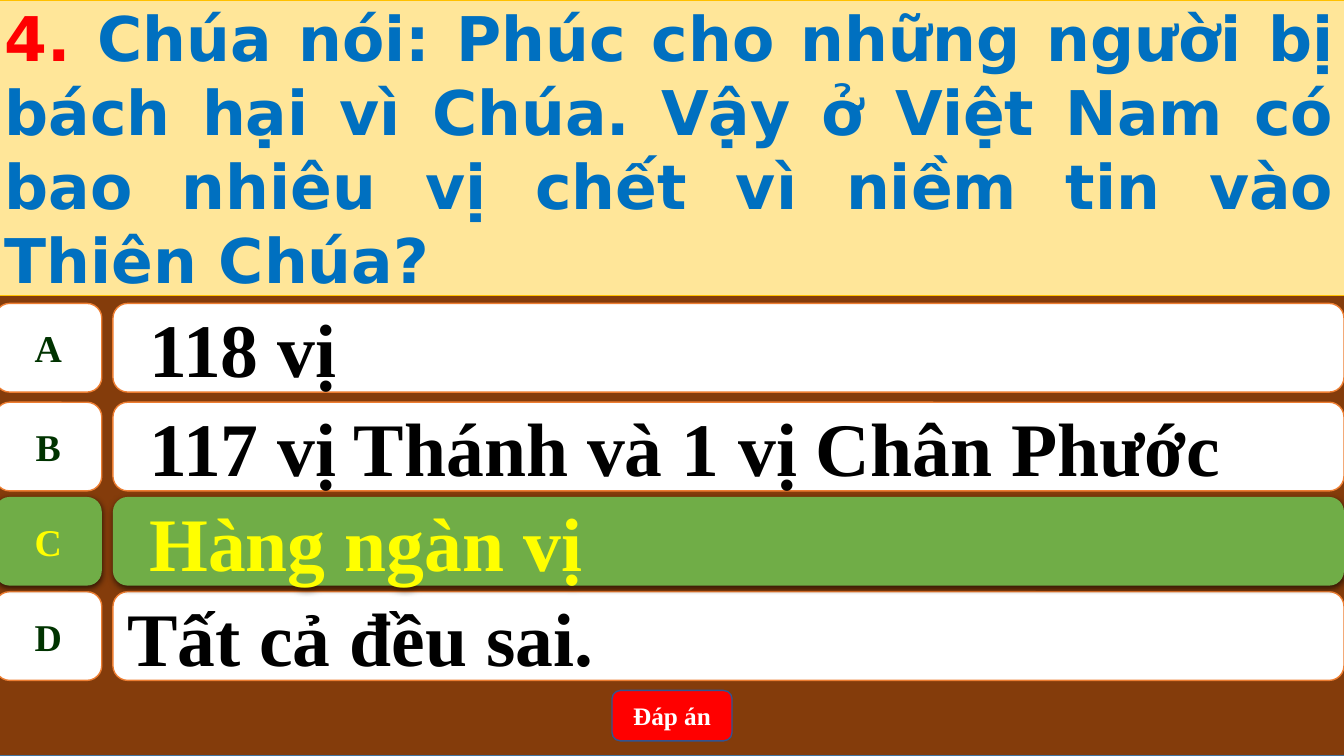
from dataclasses import dataclass

from lxml import etree
from pptx import Presentation
from pptx.dml.color import RGBColor
from pptx.enum.shapes import MSO_SHAPE
from pptx.enum.text import MSO_ANCHOR, PP_ALIGN
from pptx.oxml import parse_xml
from pptx.oxml.ns import nsdecls
from pptx.shapes.autoshape import Shape
from pptx.text.text import _Paragraph
from pptx.util import Inches, Pt

RECT = MSO_SHAPE.RECTANGLE
ROUNDED = MSO_SHAPE.ROUNDED_RECTANGLE
BADGE = MSO_SHAPE.FLOWCHART_ALTERNATE_PROCESS
MIDDLE = MSO_ANCHOR.MIDDLE
LEFT, CENTER, JUSTIFY = PP_ALIGN.LEFT, PP_ALIGN.CENTER, PP_ALIGN.JUSTIFY

SERIF, SANS = "Times New Roman", "DejaVu Sans"
EDGE, FULL_WIDTH = -0.05, 13.39
BADGE_WIDTH, ANSWER_LEFT, ANSWER_WIDTH, ROW_HEIGHT = 1.06, 1.12, 12.21, 0.88


@dataclass(frozen=True)
class Answer:
    letter: str
    text: str
    top: float
    indented: bool = True
    correct: bool = False


ANSWERS = [
    Answer("A", "118 vị", 3.01),
    Answer("B", "117 vị Thánh và 1 vị Chân Phước", 3.99),
    Answer("D", "Tất cả đều sai.", 5.87, indented=False),
    Answer("C", "Hàng ngàn vị", 4.93, correct=True),
]


def rgb(color: str) -> RGBColor:
    return RGBColor.from_string(color)


def add_box(slide, kind: MSO_SHAPE, left: float, top: float, width: float, height: float,
            fill: str, line: str | None = None, line_width: float = 1) -> Shape:
    box = slide.shapes.add_shape(kind, Inches(left), Inches(top), Inches(width), Inches(height))
    box.shadow.inherit = False
    box.fill.solid()
    box.fill.fore_color.rgb = rgb(fill)
    if line:
        box.line.color.rgb = rgb(line)
        box.line.width = Pt(line_width)
    else:
        box.line.fill.background()
    box.text_frame.vertical_anchor = MIDDLE
    box.text_frame.word_wrap = True
    return box


def write(box: Shape, text: str, size: float, color: str,
          align: PP_ALIGN = CENTER, font: str = SERIF) -> _Paragraph:
    paragraph = box.text_frame.paragraphs[0]
    paragraph.alignment = align
    paragraph.font.name = font
    paragraph.font.size = Pt(size)
    paragraph.font.bold = True
    paragraph.font.color.rgb = rgb(color)
    paragraph.add_run().text = text
    return paragraph


def hang_indent(paragraph: _Paragraph) -> None:
    paragraph.level = 1
    properties = paragraph._p.get_or_add_pPr()
    properties.set("marL", str(Inches(0.5)))
    properties.set("indent", str(Inches(-0.28)))


def cast_shadow(box: Shape) -> None:
    """Fill the empty effect list with a soft shadow falling straight down."""
    effects = box._element.spPr.find("{*}effectLst")
    effects.append(parse_xml(
        f'<a:outerShdw {nsdecls("a")} blurRad="{Pt(4.5)}" dist="{Pt(1.5)}" dir="5400000"'
        ' algn="ctr" rotWithShape="0"><a:srgbClr val="000000"><a:alpha val="63000"/>'
        '</a:srgbClr></a:outerShdw>'))
    etree.cleanup_namespaces(effects)


def add_answer(slide, answer: Answer) -> None:
    fill, line = ("70AD47", None) if answer.correct else ("FFFFFF", "ED7D31")
    letter_color, text_color = ("FFFF00", "FFFF00") if answer.correct else ("003300", "000000")

    bar = add_box(slide, ROUNDED, ANSWER_LEFT, answer.top, ANSWER_WIDTH, ROW_HEIGHT, fill, line)
    sentence = write(bar, answer.text, 54, text_color, LEFT)
    if answer.indented:
        hang_indent(sentence)

    badge = add_box(slide, BADGE, EDGE, answer.top, BADGE_WIDTH, ROW_HEIGHT, fill, line)
    badge.text_frame.word_wrap = False
    write(badge, answer.letter, 27, letter_color)

    if answer.correct:
        cast_shadow(bar)
        cast_shadow(badge)


def add_question(slide) -> None:
    panel = add_box(slide, RECT, EDGE, 0, FULL_WIDTH, 2.93, "FFE699", "FFC000", 0.5)
    question = write(panel, "4. ", 44, "0070C0", JUSTIFY, SANS)
    question.runs[0].font.color.rgb = rgb("FF0000")
    question.add_run().text = ("Chúa nói: Phúc cho những người bị bách hại vì Chúa. "
                               "Vậy ở Việt Nam có bao nhiêu vị chết vì niềm tin vào Thiên Chúa?")


def main() -> None:
    deck = Presentation()
    deck.slide_width, deck.slide_height = Inches(13.33), Inches(7.5)
    slide = deck.slides.add_slide(deck.slide_layouts[6])

    add_box(slide, RECT, EDGE, 0, FULL_WIDTH, 7.5, "843C0B", "43739E")
    reveal_button = add_box(slide, ROUNDED, 6.07, 6.85, 1.19, 0.5, "FF0000", "325491")
    write(reveal_button, "Đáp án", 18, "FFFFFF")
    add_question(slide)
    for answer in ANSWERS:
        add_answer(slide, answer)

    deck.save("out.pptx")


if __name__ == "__main__":
    main()
